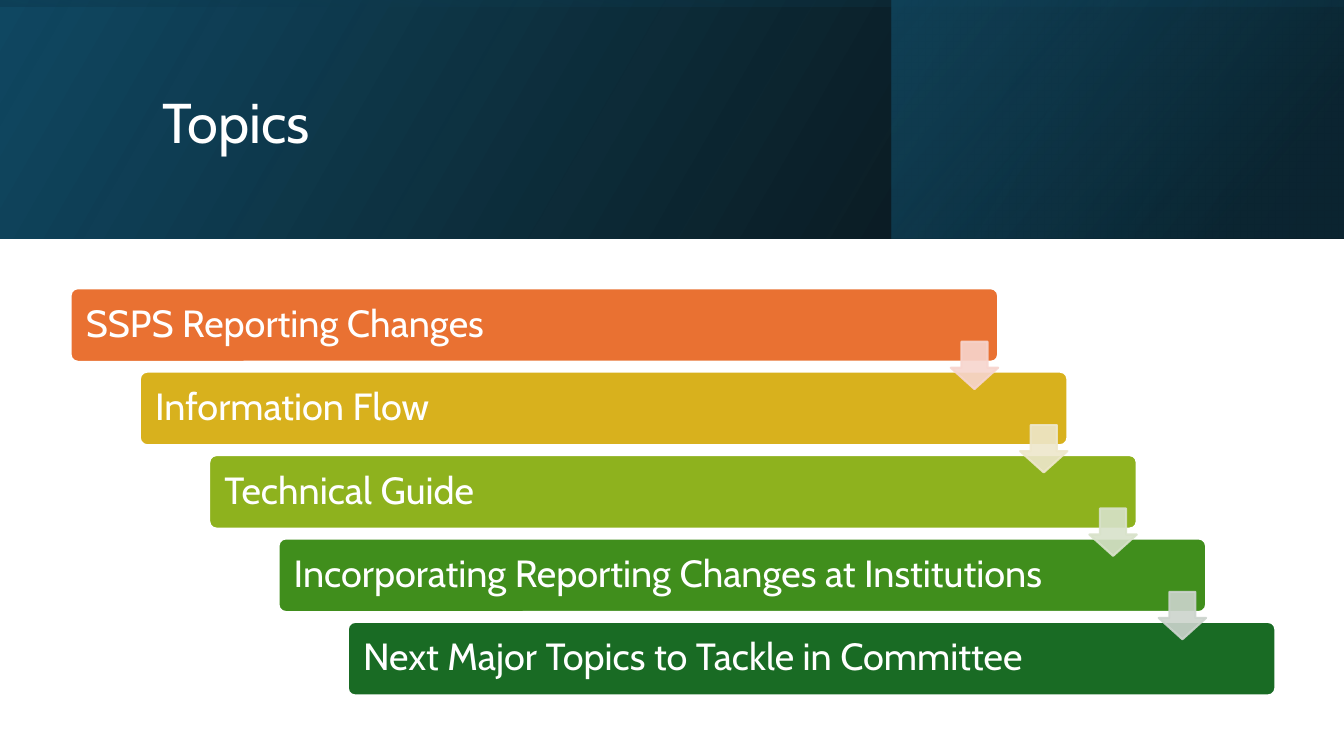
import lxml.etree
import pptx
import pptx.dml.color
import pptx.enum.shapes
import pptx.enum.text
import pptx.oxml
import pptx.oxml.ns
import pptx.util

Inches, Pt = pptx.util.Inches, pptx.util.Pt
SHAPE = pptx.enum.shapes.MSO_SHAPE
FONT = "Cabin"
COLORS = {"white": "FFFFFF", "black": "000000", "navy": "104862",
          "deep": "0B3041", "teal": "156082"}
TOPICS = [
    ("SSPS Reporting Changes", "E97132", "F7D5CE"),
    ("Information Flow", "D8B11D", "EEE7CB"),
    ("Technical Guide", "8EB21E", "D8E2CA"),
    ("Incorporating Reporting Changes at Institutions", "408E1C", "CCD4CD"),
    ("Next Major Topics to Tackle in Committee", "196B24", None),
]


def rgb(code):
    """Turn a hex string into a colour."""
    return pptx.dml.color.RGBColor.from_string(code)


def add_block(slide, kind, left, top, width, height):
    """Add a preset shape without shadow, sized in inches."""
    block = slide.shapes.add_shape(
        kind, Inches(left), Inches(top), Inches(width), Inches(height))
    block.shadow.inherit = False
    return block


def paint(block, fill, line):
    """Give a shape a solid fill and a 1.5 point outline."""
    block.fill.solid()
    block.fill.fore_color.rgb = rgb(fill)
    block.line.color.rgb = rgb(line)
    block.line.width = Pt(1.5)


def fade(block, share):
    """Set the opacity in percent of the fill and outline."""
    for color in block._element.spPr.iter(pptx.oxml.ns.qn("a:srgbClr")):
        alpha = lxml.etree.SubElement(color, pptx.oxml.ns.qn("a:alpha"))
        alpha.set("val", str(share * 1000))


def add_panel(slide, box, stops, angle, turn=0):
    """Add a mirrored panel with a translucent gradient."""
    panel = add_block(slide, SHAPE.RECTANGLE, *box)
    panel.rotation = turn
    panel.line.fill.background()
    props = panel._element.spPr
    props.find(pptx.oxml.ns.qn("a:xfrm")).set("flipH", "1")
    marks = "".join(
        f'<a:gs pos="{spot * 1000}"><a:srgbClr val="{COLORS[name]}">'
        f'<a:alpha val="{share * 1000}"/></a:srgbClr></a:gs>'
        for spot, name, share in stops)
    blend = pptx.oxml.parse_xml(
        f'<a:gradFill {pptx.oxml.ns.nsdecls("a")} rotWithShape="1">'
        f'<a:gsLst>{marks}</a:gsLst>'
        f'<a:lin ang="{angle * 60000}" scaled="0"/></a:gradFill>')
    props.find(pptx.oxml.ns.qn("a:prstGeom")).addnext(blend)


def add_header(slide, left, top, width, height):
    """Layer the gradient banner and place the title on it."""
    add_panel(slide, (left, top, width, height),
              [(0, "black", 96), (100, "navy", 100)], 330)
    side = 4.49
    add_panel(slide, (left + width - side, top, side, height),
              [(19, "deep", 68), (100, "teal", 48)], 320)
    shift = (width - height) / 2
    add_panel(slide, (left + shift, top - shift, height, width),
              [(23, "navy", 16), (99, "black", 45)], 350, 270)

    title = slide.shapes.title
    slide.shapes._spTree.append(title._element)
    title.left, title.top = Inches(left + 1.51), Inches(top + 0.38)
    title.width, title.height = Inches(10.63), Inches(1.72)
    frame = title.text_frame
    frame.text = "Topics"
    frame.auto_size = pptx.enum.text.MSO_AUTO_SIZE.NONE
    style_text(frame, 40)


def style_text(frame, size):
    """Set white left text, centred vertically in its frame."""
    frame.word_wrap = True
    frame.vertical_anchor = pptx.enum.text.MSO_ANCHOR.MIDDLE
    para = frame.paragraphs[0]
    para.alignment = pptx.enum.text.PP_ALIGN.LEFT
    para.line_spacing = 0.9
    para.font.name = FONT
    para.font.size = Pt(size)
    para.font.color.rgb = rgb(COLORS["white"])


def add_steps(slide, left, top, width, height):
    """Fill the box with a staircase of bars linked by arrows."""
    long, tall, side = 9.2, 0.73, 0.47
    count = len(TOPICS) - 1
    across, down = (width - long) / count, (height - tall) / count
    for step, (text, fill, _) in enumerate(TOPICS):
        bar = add_block(slide, SHAPE.ROUNDED_RECTANGLE,
                        left + step * across, top + step * down, long, tall)
        bar.adjustments[0] = 0.1
        paint(bar, fill, COLORS["white"])
        frame = bar.text_frame
        frame.text = text
        frame.margin_left = frame.margin_right = Inches(0.13)
        style_text(frame, 27)
    for step, (_, _, tint) in enumerate(TOPICS[:-1]):
        arrow = add_block(slide, SHAPE.DOWN_ARROW,
                          left + step * across + long - side,
                          top + step * down + 0.53, side, side)
        arrow.adjustments[0] = 0.55
        arrow.adjustments[1] = 0.45
        paint(arrow, tint, tint)
        fade(arrow, 90)


def main():
    """Build and save the topics slide."""
    deck = pptx.Presentation()
    deck.slide_width, deck.slide_height = Inches(13.33), Inches(7.5)
    slide = deck.slides.add_slide(deck.slide_layouts[5])
    add_header(slide, 0, 0, 13.33, 2.37)
    add_steps(slide, 0.7, 2.86, 11.95, 4.04)
    deck.save("out.pptx")


if __name__ == "__main__":
    main()
